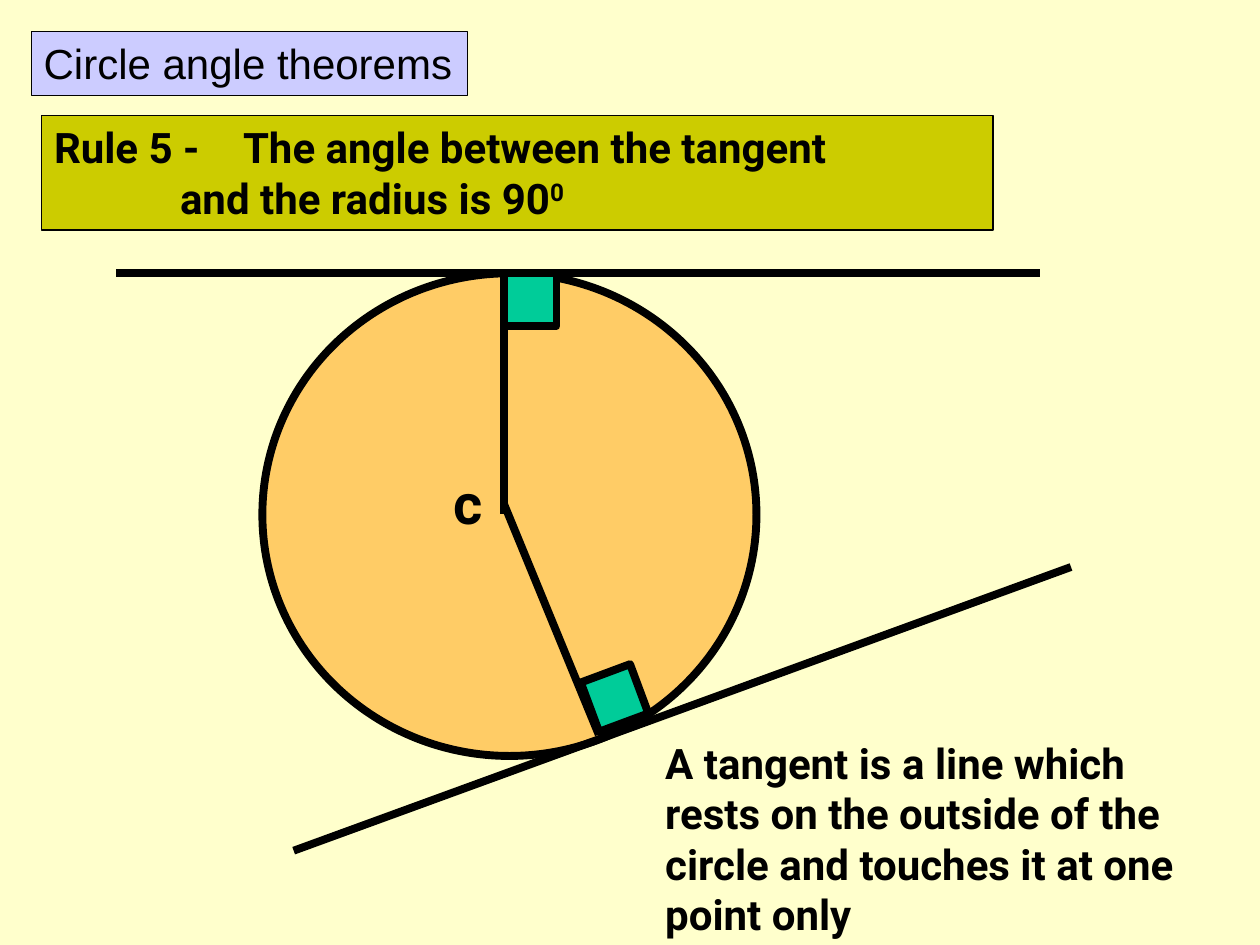
from dataclasses import dataclass

from lxml import etree
from pptx import Presentation
from pptx import util as u
from pptx.dml.color import RGBColor
from pptx.enum import shapes, text
from pptx.oxml.ns import qn


@dataclass(frozen=True)
class Theme:
    paper: str = "FFFFCC"
    ink: str = "000000"
    heading: str = "CCCCFF"
    rule: str = "CCCC00"
    circle: str = "FFCC66"
    right_angle: str = "00CC99"
    plain: str = "Arial"
    strong: str = "Roboto"
    body: int = 24
    label: int = 32
    thin: float = 0.75
    thick: float = 4.5


THEME = Theme()


def colour(value):
    return RGBColor.from_string(value)


def cm(*lengths):
    return [u.Cm(length) for length in lengths]


def add_panel(page, kind, box, fill, weight):
    panel = page.shapes.add_shape(kind, *cm(*box))
    panel.shadow.inherit = False
    panel.fill.solid()
    panel.fill.fore_color.rgb = colour(fill)
    panel.line.color.rgb = colour(THEME.ink)
    panel.line.width = u.Pt(weight)
    return panel


def add_line(page, start, end):
    line = page.shapes.add_connector(
        shapes.MSO_CONNECTOR.STRAIGHT, *cm(*start, *end))
    line.line.color.rgb = colour(THEME.ink)
    line.line.width = u.Pt(THEME.thick)
    etree.SubElement(line._element.spPr, qn("a:effectLst"))


def add_span(para, words, size, strong=True):
    span = para.add_run()
    span.text = words
    span.font.name = THEME.strong if strong else THEME.plain
    span.font.size = u.Pt(size)
    span.font.bold = strong
    span.font.color.rgb = colour(THEME.ink)
    return span


def write(shape, lines, size=THEME.body, strong=True):
    frame = shape.text_frame
    frame.word_wrap = False
    frame.auto_size = text.MSO_AUTO_SIZE.SHAPE_TO_FIT_TEXT
    frame.vertical_anchor = text.MSO_ANCHOR.TOP
    for index, words in enumerate(lines):
        para = frame.add_paragraph() if index else frame.paragraphs[0]
        para.alignment = text.PP_ALIGN.LEFT
        span = add_span(para, words, size, strong)
    return para, span


def add_heading(page, box):
    panel = add_panel(page, shapes.MSO_SHAPE.RECTANGLE, box,
                      THEME.heading, THEME.thin)
    write(panel, ["Circle angle theorems"], strong=False)


def add_rule(page, box):
    panel = add_panel(page, shapes.MSO_SHAPE.RECTANGLE, box,
                      THEME.rule, THEME.thin)
    para, _ = write(panel, ["Rule 5 - \tThe angle between the tangent",
                            "\t\tand the radius is 90"])
    degree = add_span(para, "0", THEME.body)
    degree._r.get_or_add_rPr().set("baseline", "30000")


def add_diagram(page, box):
    left, top, width, height = box

    def at(x, y):
        return left + x, top + y

    centre, top_touch, low_touch = at(7.82, 4.65), at(7.82, 0), at(9.73, 9.3)
    square = 1.06

    # Circle and its two tangents
    add_panel(page, shapes.MSO_SHAPE.OVAL, (*at(2.95, 0), 9.96, 9.73),
              THEME.circle, THEME.thick)
    add_line(page, at(3.58, height), at(width, 5.92))
    add_line(page, at(0, 0), at(18.62, 0))

    # Centre label and radii
    label = page.shapes.add_textbox(*cm(*at(6.55, 3.81), 1.12, 1.6))
    write(label, ["c"], THEME.label)
    add_line(page, centre, low_touch)
    add_line(page, at(7.82, 4.85), top_touch)

    # Right-angle marks
    for corner, turn in ((top_touch, 0), (at(9.52, 8.03), -20.4)):
        mark = add_panel(page, shapes.MSO_SHAPE.RECTANGLE,
                         (*corner, square, square),
                         THEME.right_angle, THEME.thick)
        mark.rotation = turn


def add_definition(page, box):
    note = page.shapes.add_textbox(*cm(*box))
    write(note, ["A tangent is a line which", "rests on the outside of the",
                 "circle and touches it at one", "point only"])


def main():
    deck = Presentation()
    deck.slide_width, deck.slide_height = cm(25.4, 19.05)
    page = deck.slides.add_slide(deck.slide_layouts[6])
    page.background.fill.solid()
    page.background.fill.fore_color.rgb = colour(THEME.paper)

    add_heading(page, (0.63, 0.63, 8.79, 1.29))
    add_rule(page, (0.84, 2.33, 19.18, 2.31))
    add_diagram(page, (2.34, 5.51, 19.25, 11.64))
    add_definition(page, (13.16, 14.74, 12.24, 4.31))
    deck.save("out.pptx")


if __name__ == "__main__":
    main()
